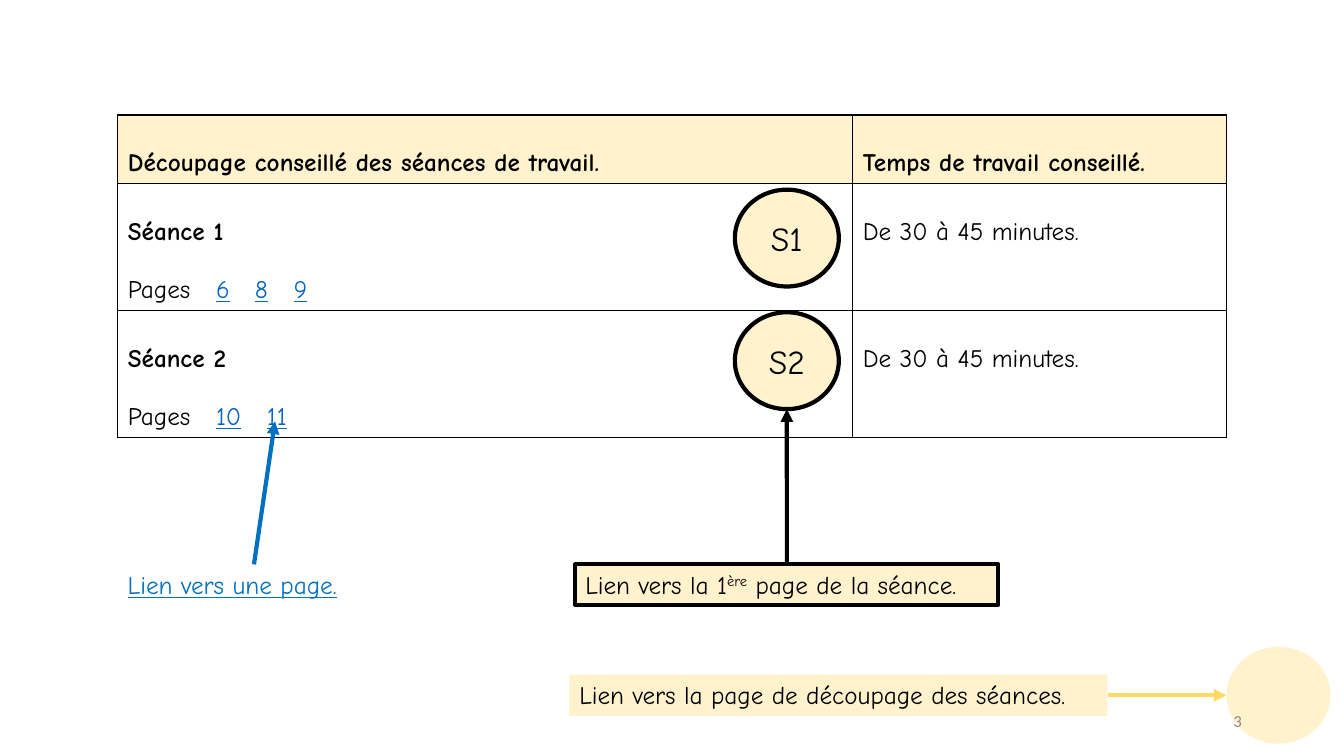
import pptx
import pptx.dml.color
import pptx.enum.shapes
import pptx.enum.text
import pptx.oxml
import pptx.oxml.ns
import pptx.util
from pptx.util import Cm

CREAM, BLACK, LINK, BLUE, GOLD, GREY = "FFF2CC", "000000", "0563C1", "0070C0", "FFD966", "8C8C8C"
SHAPE = pptx.enum.shapes.MSO_SHAPE
ALIGN = pptx.enum.text.PP_ALIGN
ANCHOR = pptx.enum.text.MSO_ANCHOR
FIT = pptx.enum.text.MSO_AUTO_SIZE.SHAPE_TO_FIT_TEXT
NS = pptx.oxml.ns.nsdecls("a")


def paint(color_format, value):
    color_format.rgb = pptx.dml.color.RGBColor.from_string(value)


def write(paragraph, text, size=18, color=BLACK, bold=False, underline=False, font="Comic Neue"):
    run = paragraph.add_run()
    run.text = text
    run.font.name = font
    run.font.size = pptx.util.Pt(size)
    run.font.bold = bold
    run.font.underline = underline
    paint(run.font.color, color)
    return run


prs = pptx.Presentation()
prs.slide_width, prs.slide_height = Cm(33.87), Cm(19.05)
slide = prs.slides.add_slide(prs.slide_layouts[6])
shapes = slide.shapes

schedule = shapes.add_table(3, 2, Cm(2.97), Cm(2.9), Cm(27.94), Cm(8.1)).table
schedule.first_row = schedule.horz_banding = False
for column, width in zip(schedule.columns, (18.52, 9.42)):
    column.width = Cm(width)
for row, height in zip(schedule.rows, (1.7, 3.2, 3.2)):
    row.height = Cm(height)

for cell in schedule.iter_cells():
    borders = cell._tc.get_or_add_tcPr()
    for side in "LRTB":
        borders.append(pptx.oxml.parse_xml(
            f'<a:ln{side} {NS} w="12700"><a:solidFill><a:srgbClr val="{BLACK}"/></a:solidFill></a:ln{side}>'))
    cell.fill.background()

headings = ("Découpage conseillé des séances de travail.", "Temps de travail conseillé.")
for cell, heading in zip(schedule.rows[0].cells, headings):
    cell.fill.solid()
    paint(cell.fill.fore_color, CREAM)
    write(cell.text_frame.paragraphs[0], heading, bold=True)

sessions = [
    ("Séance 1", {"6": 2.22, "8": 3.2, "9": 4.18}),
    ("Séance 2", {"10": 2.22, "11": 3.5}),
]
for number, (session, pages) in enumerate(sessions, 1):
    outline, duration = (cell.text_frame for cell in schedule.rows[number].cells)
    write(outline.paragraphs[0], session, bold=True)
    page_list = outline.add_paragraph()
    page_list.line_spacing = 2.0
    stops = "".join(f'<a:tab pos="{Cm(stop)}" algn="l"/>' for stop in pages.values())
    page_list._p.get_or_add_pPr().append(pptx.oxml.parse_xml(f"<a:tabLst {NS}>{stops}</a:tabLst>"))
    write(page_list, "Pages")
    for page in pages:
        write(page_list, "\t")
        write(page_list, page, color=LINK, underline=True)
    write(duration.paragraphs[0], "De 30 à 45 minutes.")

for cell in schedule.iter_cells():
    cell.text_frame.paragraphs[0].line_spacing = 2.0

panels = []
for kind, left, top, width, height, outlined in [
    (SHAPE.OVAL, 18.52, 4.78, 2.62, 2.44, True),
    (SHAPE.OVAL, 18.52, 7.87, 2.62, 2.44, True),
    (SHAPE.OVAL, 30.91, 16.3, 2.62, 2.44, False),
    (SHAPE.RECTANGLE, 14.5, 14.22, 10.66, 1.02, True),
    (SHAPE.RECTANGLE, 14.35, 17, 13.56, 1.04, False),
]:
    panel = shapes.add_shape(kind, Cm(left), Cm(top), Cm(width), Cm(height))
    panel.shadow.inherit = False
    panel.fill.solid()
    paint(panel.fill.fore_color, CREAM)
    if outlined:
        panel.line.width = pptx.util.Pt(3)
        paint(panel.line.color, BLACK)
    else:
        panel.line.fill.background()
    panels.append(panel)
badge_1, badge_2, corner_disc, session_link, schedule_link = panels

for badge, label in ((badge_1, "S1"), (badge_2, "S2")):
    badge.text_frame.paragraphs[0].alignment = ALIGN.CENTER
    write(badge.text_frame.paragraphs[0], label, size=24)

page_link = shapes.add_textbox(Cm(2.97), Cm(14.22), Cm(6.86), Cm(1.02))
for caption in (session_link, schedule_link, page_link):
    caption.text_frame.word_wrap = True
    caption.text_frame.auto_size = FIT
    caption.text_frame.vertical_anchor = ANCHOR.TOP
    caption.text_frame.paragraphs[0].alignment = ALIGN.LEFT

session_text = session_link.text_frame.paragraphs[0]
write(session_text, "Lien vers la 1")
write(session_text, "ère")._r.get_or_add_rPr().set("baseline", "30000")
write(session_text, " page de la séance.")
write(schedule_link.text_frame.paragraphs[0], "Lien vers la page de découpage des séances.")
write(page_link.text_frame.paragraphs[0], "Lien vers une page.", color=BLUE, underline=True)

for source, side, end_x, end_y, color in [
    (page_link, 0, 6.93, 10.62, BLUE),
    (schedule_link, 3, 30.91, 17.52, GOLD),
    (session_link, 0, 19.83, 10.31, BLACK),
]:
    arrow = shapes.add_connector(
        pptx.enum.shapes.MSO_CONNECTOR.STRAIGHT, source.left, source.top, Cm(end_x), Cm(end_y))
    arrow.begin_connect(source, side)
    arrow.line.width = pptx.util.Pt(3)
    paint(arrow.line.color, color)
    arrow.line._get_or_add_ln().append(pptx.oxml.parse_xml(f'<a:tailEnd {NS} type="triangle"/>'))
    arrow._element.spPr.append(pptx.oxml.parse_xml(f"<a:effectLst {NS}/>"))

page_number = shapes.add_textbox(Cm(23.93), Cm(17.65), Cm(7.62), Cm(1.02)).text_frame
page_number.word_wrap = True
page_number.vertical_anchor = ANCHOR.MIDDLE
page_number.paragraphs[0].alignment = ALIGN.RIGHT
write(page_number.paragraphs[0], "3", size=12, color=GREY, font="Calibri")

prs.save("out.pptx")
